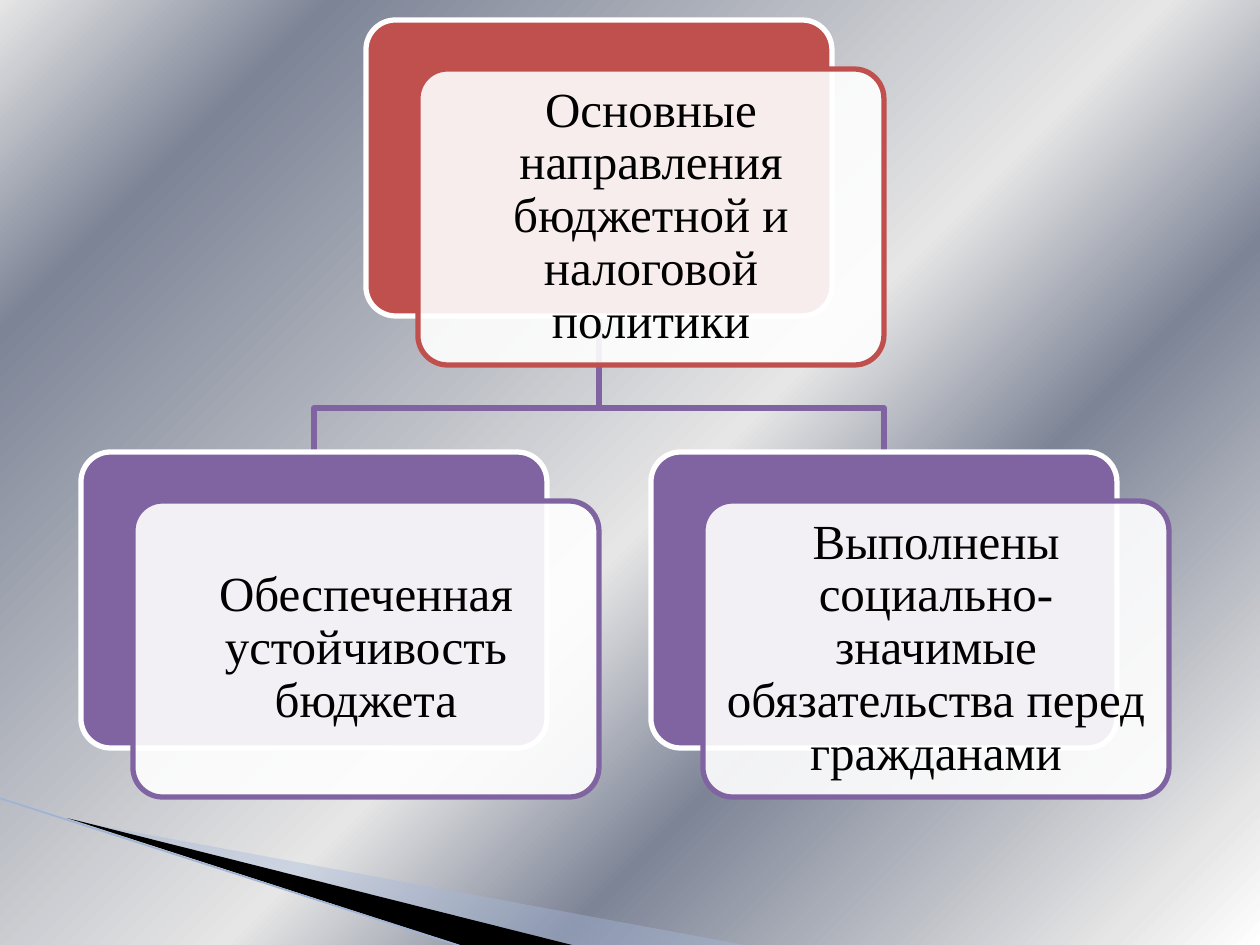
"""Build a slide with a two-branch hierarchy of budget policy goals."""
from lxml import etree
from pptx import Presentation
from pptx import util as u
from pptx.dml.color import RGBColor
from pptx.enum import shapes, text
from pptx.oxml.ns import qn

SCALE = u.Inches(1) / 126
WHITE = RGBColor(0xFF, 0xFF, 0xFF)
BLACK = RGBColor(0x00, 0x00, 0x00)
RED = RGBColor(0xC0, 0x50, 0x4D)
PURPLE = RGBColor(0x80, 0x64, 0xA2)
PALE_BLUE = RGBColor(0xA7, 0xB9, 0xDB)
EDGE_BLUE = RGBColor(0x9E, 0xB3, 0xD6)
SILVER = RGBColor(0xE6, 0xE6, 0xE6)
STEEL = RGBColor(0x7D, 0x84, 0x96)
SHEEN = [(0, WHITE), (7, SILVER), (32, STEEL), (47, SILVER), (85, STEEL), (100, SILVER)]

CARD_W, CARD_H = 466, 296
SHIFT_X, SHIFT_Y = 52, 49
ROOT_TOP, BRANCH_TOP, JUNCTION_Y = 20, 452, 408
FIRST_LEFT, PITCH = 81, 570
ROOT = "Основные направления бюджетной и налоговой политики"
BRANCHES = [
    "Обеспеченная устойчивость бюджета",
    "Выполнены социально-значимые обязательства перед гражданами",
]


def px(*lengths):
    return [u.Emu(round(length * SCALE)) for length in lengths]


def write(frame, words, *, size=28, font="Times New Roman", color=BLACK, inset=15):
    frame.word_wrap = True
    frame.vertical_anchor = text.MSO_ANCHOR.MIDDLE
    frame.margin_left = frame.margin_right = px(inset)[0]
    frame.margin_top = frame.margin_bottom = px(inset)[0]
    paragraph = frame.paragraphs[0]
    paragraph.alignment = text.PP_ALIGN.CENTER
    paragraph.line_spacing = 0.9
    run = paragraph.add_run()
    run.text = words
    run.font.size, run.font.name = u.Pt(size), font
    run.font.color.rgb = color


class Deck:
    def __init__(self, width, height, line_width=3):
        self.line_width = line_width
        self.show = Presentation()
        self.show.slide_width, self.show.slide_height = px(width, height)
        self.slide = self.show.slides.add_slide(self.show.slide_layouts[6])

    def background(self, stops, angle):
        fill = self.slide.background.fill
        fill.gradient()
        fill.gradient_angle = angle
        stop_list = self.slide._element.xpath(".//p:bg//a:gsLst")[0]
        for stop in list(stop_list):
            stop_list.remove(stop)
        for percent, color in stops:
            stop = etree.SubElement(stop_list, qn("a:gs"), pos=str(percent * 1000))
            etree.SubElement(stop, qn("a:srgbClr"), val=str(color))

    def paint(self, shape, fill=None, line=None, opacity=100):
        shape.shadow.inherit = False
        if fill is None:
            shape.fill.background()
        else:
            shape.fill.solid()
            shape.fill.fore_color.rgb = fill
        if opacity < 100:
            color = shape._element.spPr.find(qn("a:solidFill"))[0]
            etree.SubElement(color, qn("a:alpha"), val=str(opacity * 1000))
        if line is None:
            shape.line.fill.background()
        else:
            shape.line.color.rgb = line
            shape.line.width = u.Pt(self.line_width)

    def outline(self, points, close=False, **look):
        builder = self.slide.shapes.build_freeform(*points[0], scale=SCALE)
        builder.add_line_segments(points[1:], close=close)
        self.paint(builder.convert_to_shape(), **look)

    def line(self, start, end, color, width):
        edge = self.slide.shapes.add_connector(
            shapes.MSO_CONNECTOR.STRAIGHT, *px(*start, *end))
        edge.line.color.rgb = color
        edge.line.width = u.Pt(width)
        etree.SubElement(edge._element.spPr, qn("a:effectLst"))

    def panel(self, left, top, **look):
        panel = self.slide.shapes.add_shape(
            shapes.MSO_SHAPE.ROUNDED_RECTANGLE, *px(left, top, CARD_W, CARD_H))
        panel.adjustments[0] = 0.1
        self.paint(panel, **look)
        return panel

    def card(self, left, top, words, color):
        self.panel(left, top, fill=color, line=WHITE)
        front = self.panel(left + SHIFT_X, top + SHIFT_Y,
                           fill=WHITE, line=color, opacity=90)
        write(front.text_frame, words)

    def save(self):
        self.show.save("out.pptx")


def main():
    deck = Deck(1260, 945)
    deck.background(SHEEN, 135)
    deck.outline([(69, 820), (750, 946), (575, 946)], close=True,
                 fill=PALE_BLUE, opacity=40)
    deck.outline([(67, 818), (576, 946), (469, 948)], close=True, fill=BLACK)
    deck.line((-1, 798), (467, 948), EDGE_BLUE, 0.95)

    lefts = [FIRST_LEFT + i * PITCH for i in range(len(BRANCHES))]
    root_left = sum(lefts) // len(lefts)
    root_x = root_left + CARD_W // 2
    for left in reversed(lefts):
        branch_x = left + CARD_W // 2
        deck.outline([(root_x, ROOT_TOP + CARD_H), (root_x, JUNCTION_Y),
                      (branch_x, JUNCTION_Y), (branch_x, BRANCH_TOP)], line=PURPLE)
    deck.card(root_left, ROOT_TOP, ROOT, RED)
    for left, words in zip(lefts, BRANCHES):
        deck.card(left, BRANCH_TOP, words, PURPLE)
    deck.save()


if __name__ == "__main__":
    main()
